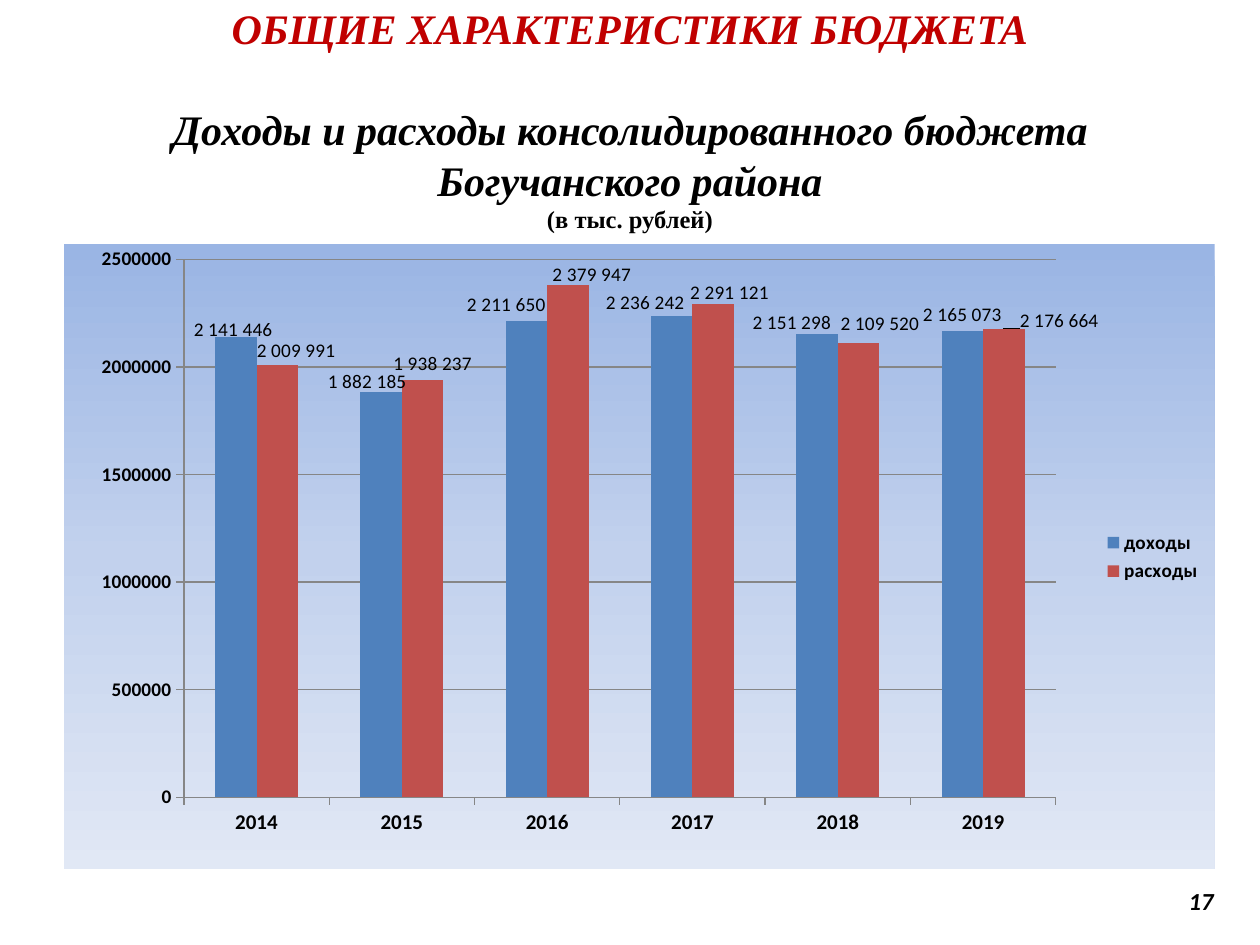
from dataclasses import dataclass

from lxml import etree
from pptx import Presentation
from pptx.chart.data import CategoryChartData
from pptx.dml.color import RGBColor
from pptx.enum.chart import XL_CHART_TYPE as ChartType
from pptx.enum.chart import XL_LABEL_POSITION as LabelPosition
from pptx.enum.chart import XL_LEGEND_POSITION as LegendPosition
from pptx.enum.chart import XL_TICK_MARK as TickMark
from pptx.enum.text import MSO_ANCHOR as Anchor
from pptx.enum.text import PP_ALIGN as Align
from pptx.oxml import parse_xml
from pptx.oxml.ns import nsdecls, qn
from pptx.util import Inches, Pt


@dataclass(frozen=True)
class Theme:
    heading: str = "C00000"
    ink: str = "000000"
    grid: str = "868686"
    income: str = "4F81BD"
    spending: str = "C0504D"
    backdrop: tuple = ((0, "9AB5E4"), (50, "C2D1ED"), (100, "E1E8F5"))
    serif: str = "Times New Roman"
    sans: str = "Calibri"
    title_size: int = 24
    small_size: int = 14
    category_size: int = 12
    label_size: int = 11


THEME = Theme()
CHART_WIDTH, CHART_HEIGHT = 9.13, 4.96
YEARS = ("2014", "2015", "2016", "2017", "2018", "2019")
SERIES = (
    (
        "доходы",
        THEME.income,
        (2141446, 1882185, 2211650, 2236242, 2151298, 2165073),
        ((-0.02, 0.08), (-0.11, 0.05), (-0.16, 0), (-0.21, 0.03), (-0.2, 0.04), (0, 0)),
    ),
    (
        "расходы",
        THEME.spending,
        (2009991, 1938237, 2379947, 2291121, 2109520, 2176664),
        ((0.15, 0.02), (0.08, 0), (0.19, 0.05), (0.13, 0.04), (0.17, -0.02), (0.44, 0.07)),
    ),
)


def style_font(font, size, color=THEME.ink, name=THEME.sans, bold=True, italic=False):
    font.size = Pt(size)
    font.name = name
    font.bold = bold
    font.italic = italic
    font.color.rgb = RGBColor.from_string(color)


def add_box(page, left, top, width, height, anchor):
    box = page.shapes.add_textbox(Inches(left), Inches(top), Inches(width), Inches(height))
    frame = box.text_frame
    frame.word_wrap = True
    frame.vertical_anchor = anchor
    return frame


def add_span(para, text, align, **style):
    para.alignment = align
    span = para.add_run()
    span.text = text
    style_font(span.font, **style)


def add_title(page):
    frame = add_box(page, 0, 0.02, 10, 1.88, Anchor.TOP)
    frame.margin_top = frame.margin_bottom = 0
    lines = (
        ("ОБЩИЕ ХАРАКТЕРИСТИКИ БЮДЖЕТА", THEME.title_size, THEME.heading, True, 0),
        ("Доходы и расходы консолидированного бюджета", THEME.title_size, THEME.ink, True, 29),
        ("Богучанского района", THEME.title_size, THEME.ink, True, 0),
        ("(в тыс. рублей)", THEME.small_size, THEME.ink, False, 0),
    )
    for index, (text, size, color, italic, gap) in enumerate(lines):
        para = frame.add_paragraph() if index else frame.paragraphs[0]
        if gap:
            para.space_before = Pt(gap)
        add_span(para, text, Align.CENTER, size=size, color=color, name=THEME.serif, italic=italic)


def add_page_number(page):
    frame = add_box(page, 7.17, 6.95, 2.56, 0.4, Anchor.MIDDLE)
    add_span(frame.paragraphs[0], "17", Align.RIGHT, size=THEME.small_size, italic=True)


def manual_layout(**values):
    layout = etree.Element(qn("c:layout"))
    manual = etree.SubElement(layout, qn("c:manualLayout"))
    for tag, value in values.items():
        etree.SubElement(manual, qn(f"c:{tag}")).set("val", str(value))
    return layout


def fill_backdrop(chart):
    stops = "".join(
        f'<a:gs pos="{place * 1000}"><a:srgbClr val="{color}"/></a:gs>'
        for place, color in THEME.backdrop
    )
    chart.element.find(qn("c:chart")).addnext(parse_xml(
        f'<c:spPr {nsdecls("c", "a")}><a:gradFill><a:gsLst>{stops}</a:gsLst>'
        '<a:lin ang="5400000" scaled="0"/></a:gradFill><a:ln><a:noFill/></a:ln></c:spPr>'
    ))


def place_plot(chart):
    area = chart.element.find(".//" + qn("c:plotArea"))
    for layout in area.findall(qn("c:layout")):
        area.remove(layout)
    area.insert(0, manual_layout(
        layoutTarget="inner", xMode="edge", yMode="edge", x=0.104, y=0.024, w=0.758, h=0.861
    ))


def style_line(line):
    line.color.rgb = RGBColor.from_string(THEME.grid)
    line.width = Pt(0.75)


def style_axis(axis, size):
    axis.major_tick_mark = TickMark.OUTSIDE
    axis.minor_tick_mark = TickMark.NONE
    style_font(axis.tick_labels.font, size)
    style_line(axis.format.line)


def add_point_label(point, value, offset):
    label = point.data_label
    para = label.text_frame.paragraphs[0]
    add_span(para, f"{value:,}".replace(",", " "), Align.CENTER, size=THEME.label_size, bold=False)
    label.position = LabelPosition.OUTSIDE_END
    return manual_layout(x=round(offset[0] / CHART_WIDTH, 4), y=round(offset[1] / CHART_HEIGHT, 4))


def style_series(series, color, values, offsets):
    series.format.fill.solid()
    series.format.fill.fore_color.rgb = RGBColor.from_string(color)
    series.invert_if_negative = False
    layouts = [
        add_point_label(series.points[index], value, offset)
        for index, (value, offset) in enumerate(zip(values, offsets))
    ]
    labels = series.data_labels
    labels.show_value = True
    labels.position = LabelPosition.OUTSIDE_END
    style_font(labels.font, THEME.label_size, bold=False)
    for index, layout in zip(series._element.iterfind(".//" + qn("c:dLbl") + "/" + qn("c:idx")), layouts):
        index.addnext(layout)


def add_budget_chart(page):
    data = CategoryChartData(number_format="General")
    data.categories = YEARS
    for name, _, values, _ in SERIES:
        data.add_series(name, values)
    chart = page.shapes.add_chart(
        ChartType.COLUMN_CLUSTERED, Inches(0.51), Inches(1.94),
        Inches(CHART_WIDTH), Inches(CHART_HEIGHT), data,
    ).chart
    style_font(chart.font, 18, bold=False)
    chart.has_title = False
    fill_backdrop(chart)
    place_plot(chart)
    style_axis(chart.category_axis, THEME.category_size)
    axis = chart.value_axis
    style_axis(axis, THEME.label_size)
    axis.minimum_scale, axis.maximum_scale, axis.major_unit = 0, 2500000, 500000
    axis.has_major_gridlines = True
    style_line(axis.major_gridlines.format.line)
    chart.has_legend = True
    chart.legend.position = LegendPosition.RIGHT
    chart.legend.include_in_layout = False
    style_font(chart.legend.font, THEME.label_size)
    plot = chart.plots[0]
    plot.vary_by_categories = False
    plot.gap_width = 150
    plot.overlap = 0
    for series, (_, color, values, offsets) in zip(plot.series, SERIES):
        style_series(series, color, values, offsets)


def main():
    deck = Presentation()
    deck.slide_width, deck.slide_height = Inches(10), Inches(7.5)
    page = deck.slides.add_slide(deck.slide_layouts[6])
    add_title(page)
    add_page_number(page)
    add_budget_chart(page)
    deck.save("out.pptx")


if __name__ == "__main__":
    main()
